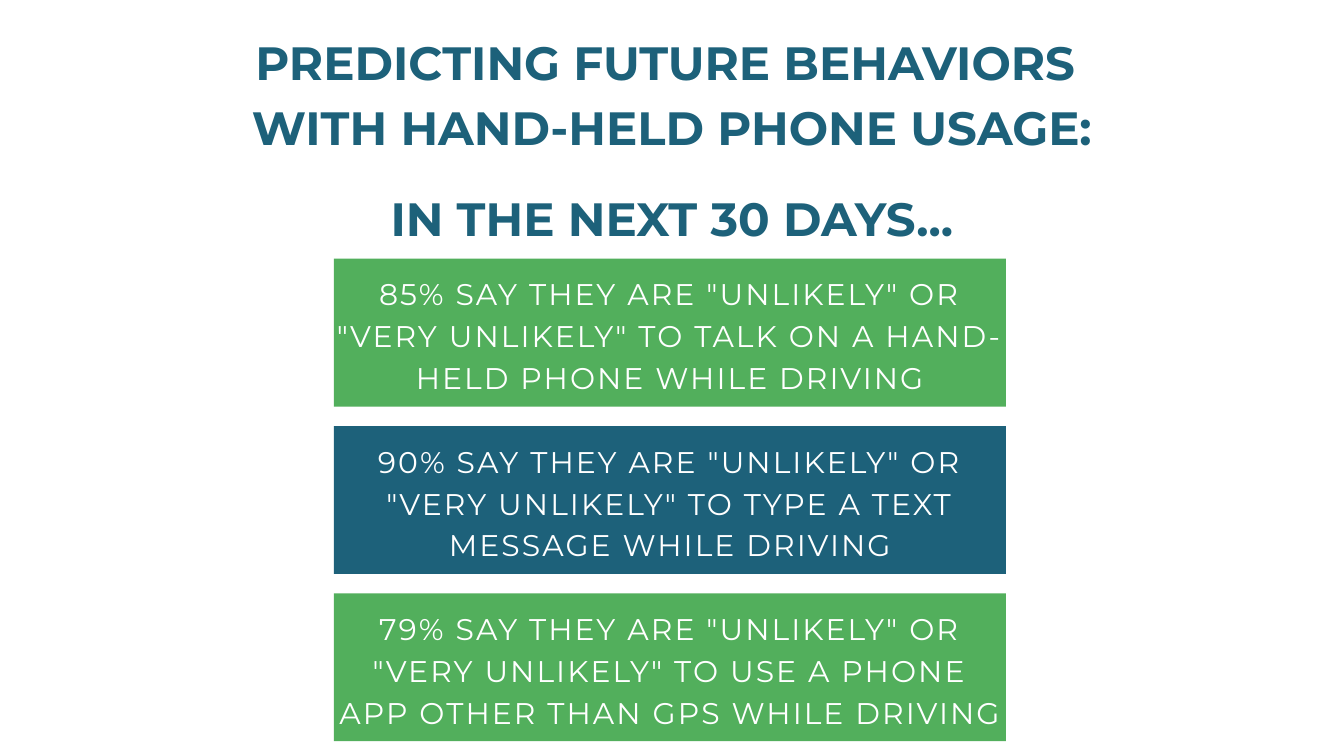
from pptx import Presentation
from pptx.dml.color import RGBColor
from pptx.enum.shapes import MSO_SHAPE
from pptx.enum.text import MSO_AUTO_SIZE, PP_ALIGN
from pptx.util import Inches, Pt

RECT = MSO_SHAPE.RECTANGLE
CENTER = PP_ALIGN.CENTER
FIT_SHAPE = MSO_AUTO_SIZE.SHAPE_TO_FIT_TEXT

SLIDE_W, SLIDE_H = 20, 11.25
FONT = "Montserrat"
COLORS = {"green": "52AF5C", "blue": "1D617A", "white": "FFFFFF"}

# Grid of the stacked bands, in inches
BAND_LEFT, BAND_TOP = 4.97, 3.85
BAND_W, BAND_H = SLIDE_W / 2, 2.2
BAND_PITCH = 2.49
TEXT_DROP, TEXT_H = 0.17, 1.81

# (text, space before in points)
TITLE = [
    ("PREDICTING FUTURE BEHAVIORS ", 0),
    ("WITH HAND-HELD PHONE USAGE:", 0),
    ("IN THE NEXT 30 DAYS...", 28),
]
# (fill, side margin of the text, text)
BANDS = [
    ("green", 0.03, '85% SAY THEY ARE "UNLIKELY" OR "VERY UNLIKELY" '
                    "TO TALK ON A HAND-HELD PHONE WHILE DRIVING"),
    ("blue", 0.24, '90% SAY THEY ARE "UNLIKELY" OR "VERY UNLIKELY" '
                   "TO TYPE A TEXT MESSAGE WHILE DRIVING"),
    ("green", 0, '79% SAY THEY ARE "UNLIKELY" OR "VERY UNLIKELY" '
                 "TO USE A PHONE APP OTHER THAN GPS WHILE DRIVING"),
]


def rgb(name):
    return RGBColor.from_string(COLORS[name])


def add_text(s, box, lines, size, leading, color, bold=False, tracking=0):
    """Add centred lines of (text, space before); tracking is in points."""
    tf = s.shapes.add_textbox(*map(Inches, box)).text_frame
    tf.word_wrap = True
    tf.auto_size = FIT_SHAPE
    tf.margin_left = tf.margin_right = tf.margin_top = tf.margin_bottom = 0
    for i, (text, before) in enumerate(lines):
        p = tf.add_paragraph() if i else tf.paragraphs[0]
        p.alignment = CENTER
        p.line_spacing = Pt(leading)
        p.space_before = Pt(before)
        r = p.add_run()
        r.text = text
        r.font.name = FONT
        r.font.size = Pt(size)
        r.font.bold = bold
        r.font.color.rgb = rgb(color)
        if tracking:
            r._r.get_or_add_rPr().set("spc", str(round(tracking * 100)))


def add_band(s, row, fill, margin, text):
    top = BAND_TOP + row * BAND_PITCH
    sp = s.shapes.add_shape(
        RECT, *map(Inches, (BAND_LEFT, top, BAND_W, BAND_H)))
    sp.shadow.inherit = False
    sp.fill.solid()
    sp.fill.fore_color.rgb = rgb(fill)
    sp.line.fill.background()
    box = (BAND_LEFT + margin, top + TEXT_DROP, BAND_W - 2 * margin, TEXT_H)
    add_text(s, box, [(text, 0)], 32, 44.8, "white", tracking=2.2)


def main():
    prs = Presentation()
    prs.slide_width, prs.slide_height = Inches(SLIDE_W), Inches(SLIDE_H)
    s = prs.slides.add_slide(prs.slide_layouts[6])
    add_text(s, (1.38, 0.36, 17.24, 3.28), TITLE, 50, 70, "blue", bold=True)
    for row, band in enumerate(BANDS):
        add_band(s, row, *band)
    prs.save("out.pptx")


if __name__ == "__main__":
    main()
